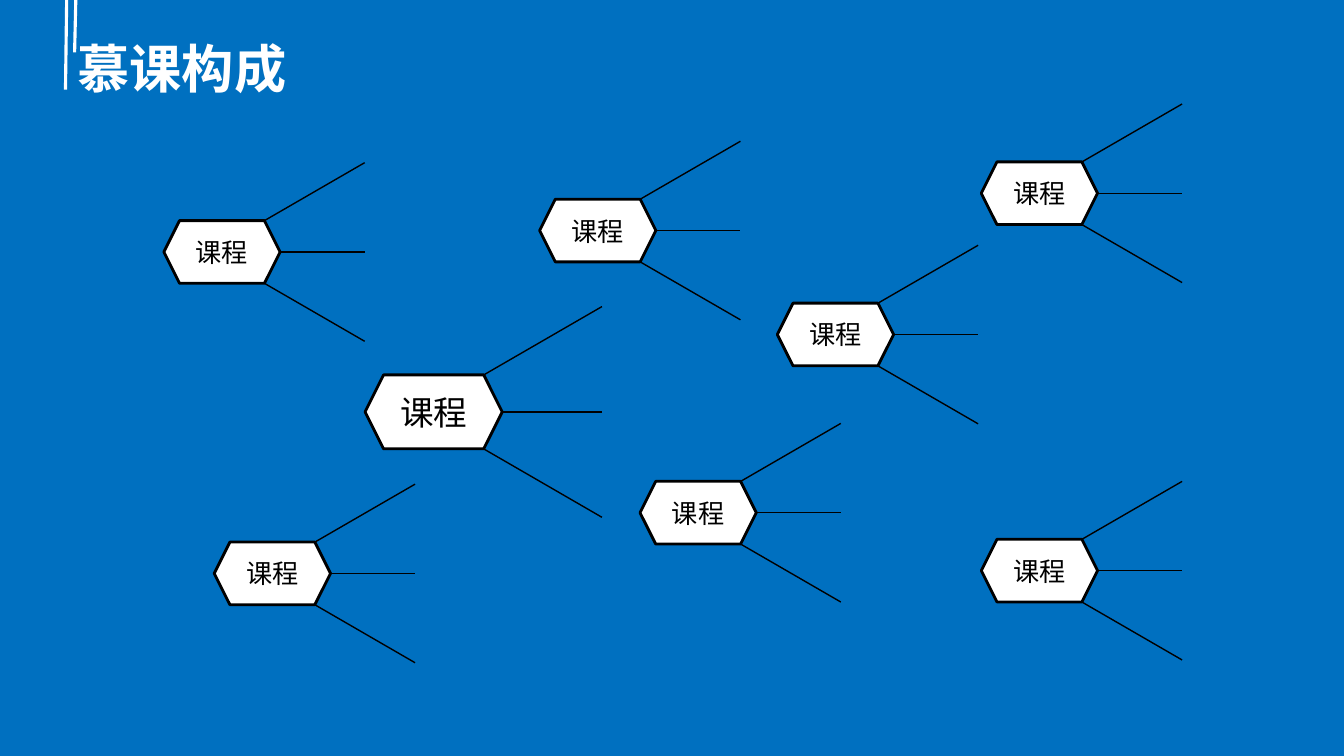
from lxml import etree
from pptx import Presentation
from pptx.dml.color import RGBColor
from pptx.enum.shapes import MSO_CONNECTOR, MSO_SHAPE
from pptx.enum.text import MSO_ANCHOR, PP_ALIGN
from pptx.oxml.ns import qn
from pptx.util import Cm, Pt

HEXAGON = MSO_SHAPE.HEXAGON
STRAIGHT = MSO_CONNECTOR.STRAIGHT
MIDDLE = MSO_ANCHOR.MIDDLE
LEFT, CENTER = PP_ALIGN.LEFT, PP_ALIGN.CENTER

BLUE, WHITE, BLACK = "0070C0", "FFFFFF", "000000"
FONT = "Noto Sans CJK SC"

# Left edge and middle height of each small course, in cm
SMALL_COURSES = [
    (4.13, 6.35), (16.13, 12.92), (5.4, 14.45), (13.6, 5.81),
    (19.59, 8.43), (24.73, 14.38), (24.73, 4.87),
]


def color(value):
    return RGBColor.from_string(value)


def write(shape, text, *, size, ink, bold=False, align=LEFT):
    frame = shape.text_frame
    frame.word_wrap = True
    frame.vertical_anchor = MIDDLE
    para = frame.paragraphs[0]
    para.alignment = align
    span = para.add_run()
    span.text = text
    span.font.size = Pt(size)
    span.font.bold = bold
    span.font.color.rgb = color(ink)
    span.font.name = FONT
    east_asian = etree.SubElement(span.font._element, qn("a:ea"))
    east_asian.set("typeface", FONT)


class CoursePage:
    def __init__(self, deck):
        self.page = deck.slides.add_slide(deck.slide_layouts[5])
        fill = self.page.background.fill
        fill.solid()
        fill.fore_color.rgb = color(BLUE)

    def title(self, text):
        box = self.page.shapes.title
        box.left, box.top = Cm(1.7), Cm(0.76)
        box.width, box.height = Cm(30.48), Cm(1.88)
        write(box, text, size=37.3, ink=WHITE, bold=True)

    def line(self, start, end, ink=BLACK, width=1, shapes=None):
        shapes = shapes or self.page.shapes
        ends = [Cm(value) for value in (*start, *end)]
        connector = shapes.add_connector(STRAIGHT, *ends)
        connector.line.color.rgb = color(ink)
        connector.line.width = Pt(width)
        etree.SubElement(connector._element.spPr, qn("a:effectLst"))

    def hexagon(self, shapes, left, top, width, height, text, size):
        shape = shapes.add_shape(
            HEXAGON, Cm(left), Cm(top), Cm(width), Cm(height))
        shape.shadow.inherit = False
        shape.fill.solid()
        shape.fill.fore_color.rgb = color(WHITE)
        shape.line.color.rgb = color(BLACK)
        shape.line.width = Pt(2)
        frame = shape.text_frame
        frame.margin_left = frame.margin_right = 0
        write(shape, text, size=size, ink=BLACK, align=CENTER)

    def course(self, left, middle, scale=1, size=18.7):
        """Draw a hexagon with three branches fanning out to the right."""
        width, height = 2.93 * scale, 1.58 * scale
        reach, rise = 5.06 * scale, 1.46 * scale
        top, bottom = middle - height / 2, middle + height / 2
        corner = left + width - height / 4
        tip = left + reach
        shapes = self.page.shapes.add_group_shape().shapes
        self.hexagon(shapes, left, top, width, height, "课程", size)
        self.line((corner, top), (tip, top - rise), shapes=shapes)
        self.line((left + width, middle), (tip, middle), shapes=shapes)
        self.line((corner, bottom), (tip, bottom + rise), shapes=shapes)


def main():
    deck = Presentation()
    deck.slide_width, deck.slide_height = Cm(33.87), Cm(19.05)
    page = CoursePage(deck)
    page.line((1.68, 0), (1.65, 2.26), WHITE, 2.25)
    page.line((1.91, 0), (1.88, 1.32), WHITE, 2.25)
    page.title("慕课构成")
    page.course(9.2, 10.38, scale=1.18, size=24)
    for left, middle in SMALL_COURSES:
        page.course(left, middle)
    deck.save("out.pptx")


if __name__ == "__main__":
    main()
